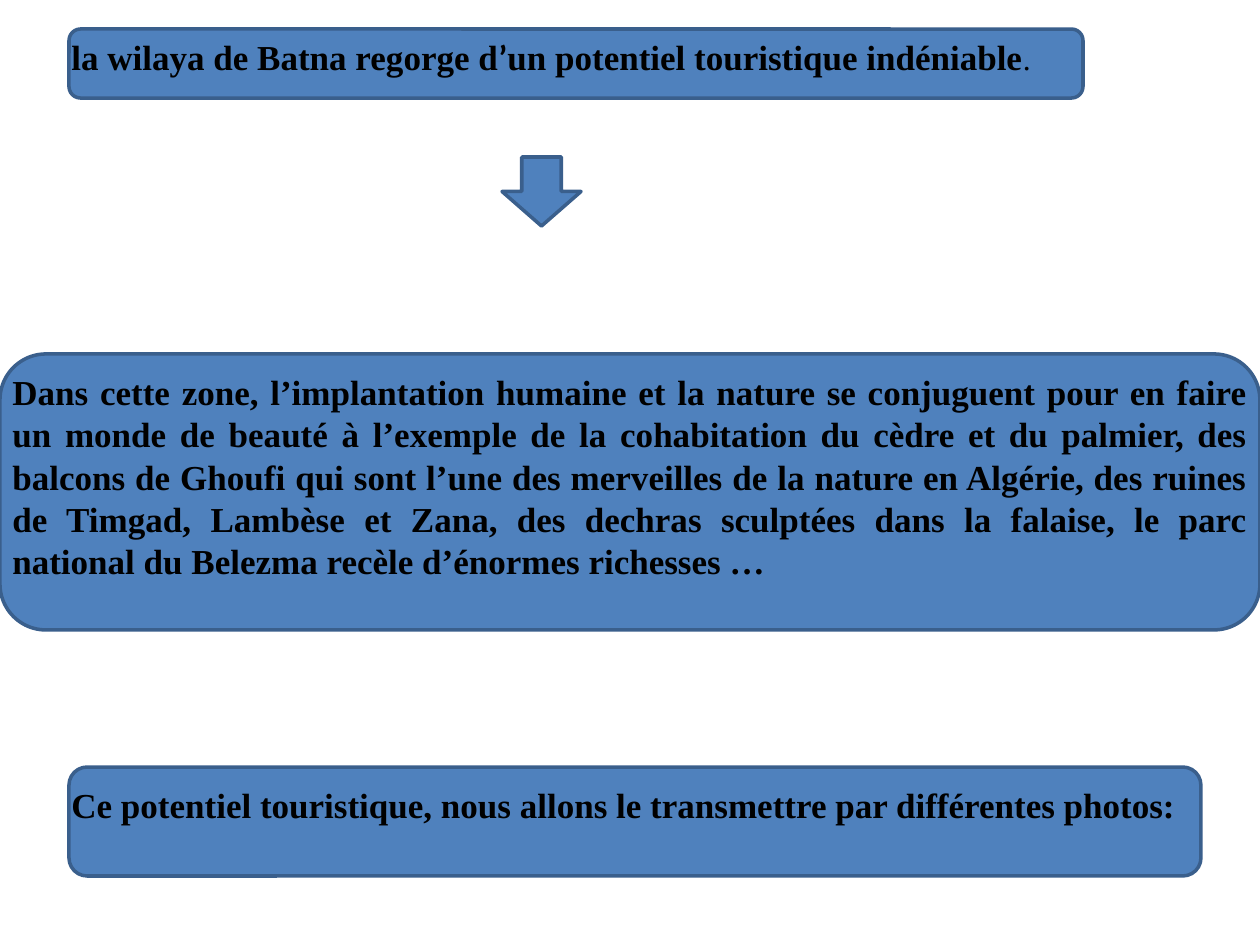
from dataclasses import dataclass
from typing import NamedTuple

from pptx import Presentation
from pptx.dml.color import RGBColor
from pptx.enum.shapes import MSO_SHAPE
from pptx.enum.text import MSO_ANCHOR, PP_ALIGN
from pptx.util import Emu, Pt

PIXELS_PER_INCH = 126


def px(length: int) -> Emu:
    return Emu(round(length * 914400 / PIXELS_PER_INCH))


@dataclass(frozen=True)
class Theme:
    fill: RGBColor = RGBColor(0x4F, 0x81, 0xBD)
    outline: RGBColor = RGBColor(0x3A, 0x5F, 0x8C)
    text: RGBColor = RGBColor(0, 0, 0)
    outline_width: Pt = Pt(2)
    body_size: Pt = Pt(20)
    period_size: Pt = Pt(18)
    body_font: str = "Times New Roman"
    apostrophe_font: str = "Calibri"


THEME = Theme()


class Box(NamedTuple):
    left: int
    top: int
    width: int
    height: int


class Span(NamedTuple):
    text: str
    font: str = THEME.body_font
    size: Pt = THEME.body_size
    bold: bool = True


class Statement(NamedTuple):
    panel: Box
    text_box: Box
    spans: list[Span]
    alignment: PP_ALIGN = PP_ALIGN.LEFT
    anchor: MSO_ANCHOR = MSO_ANCHOR.TOP


STATEMENTS = [
    Statement(
        Box(69, 29, 1014, 69),
        Box(59, 29, 1024, 55),
        [
            Span("la wilaya de Batna regorge d"),
            Span("’", font=THEME.apostrophe_font),
            Span("un potentiel touristique indéniable"),
            Span(".", size=THEME.period_size, bold=False),
        ],
    ),
    Statement(
        Box(0, 354, 1260, 276),
        Box(0, 364, 1260, 224),
        [Span(
            "Dans cette zone, l’implantation humaine et la nature se conjuguent "
            "pour en faire un monde de beauté à l’exemple de la cohabitation du "
            "cèdre et du palmier, des balcons de Ghoufi qui sont l’une des "
            "merveilles de la nature en Algérie, des ruines de Timgad, Lambèse "
            "et Zana, des dechras sculptées dans la falaise, le parc national "
            "du Belezma recèle d’énormes richesses …"
        )],
        PP_ALIGN.JUSTIFY,
        MSO_ANCHOR.MIDDLE,
    ),
    Statement(
        Box(69, 767, 1132, 109),
        Box(59, 777, 1152, 55),
        [Span("Ce potentiel touristique, nous allons le transmettre par "
              "différentes photos:")],
    ),
]
ARROW = Box(502, 157, 79, 69)


def draw_shape(slide, kind: MSO_SHAPE, box: Box) -> None:
    shape = slide.shapes.add_shape(kind, *map(px, box))
    shape.shadow.inherit = False
    shape.fill.solid()
    shape.fill.fore_color.rgb = THEME.fill
    shape.line.color.rgb = THEME.outline
    shape.line.width = THEME.outline_width


def set_font(font, span: Span) -> None:
    font.name = span.font
    font.size = span.size
    font.bold = span.bold
    font.color.rgb = THEME.text


def draw_text(slide, statement: Statement) -> None:
    frame = slide.shapes.add_textbox(*map(px, statement.text_box)).text_frame
    frame.word_wrap = True
    frame.vertical_anchor = statement.anchor
    paragraph = frame.paragraphs[0]
    paragraph.alignment = statement.alignment
    uniform = len(statement.spans) == 1
    if uniform:
        set_font(paragraph.font, statement.spans[0])
    for span in statement.spans:
        run = paragraph.add_run()
        run.text = span.text
        if not uniform:
            set_font(run.font, span)


def main() -> None:
    presentation = Presentation()
    presentation.slide_width, presentation.slide_height = px(1260), px(945)
    slide = presentation.slides.add_slide(presentation.slide_layouts[6])

    # Panels with their statements
    for statement in STATEMENTS:
        draw_shape(slide, MSO_SHAPE.ROUNDED_RECTANGLE, statement.panel)
        draw_text(slide, statement)

    # Arrow leading down from the opening statement
    draw_shape(slide, MSO_SHAPE.DOWN_ARROW, ARROW)

    presentation.save("out.pptx")


if __name__ == "__main__":
    main()
